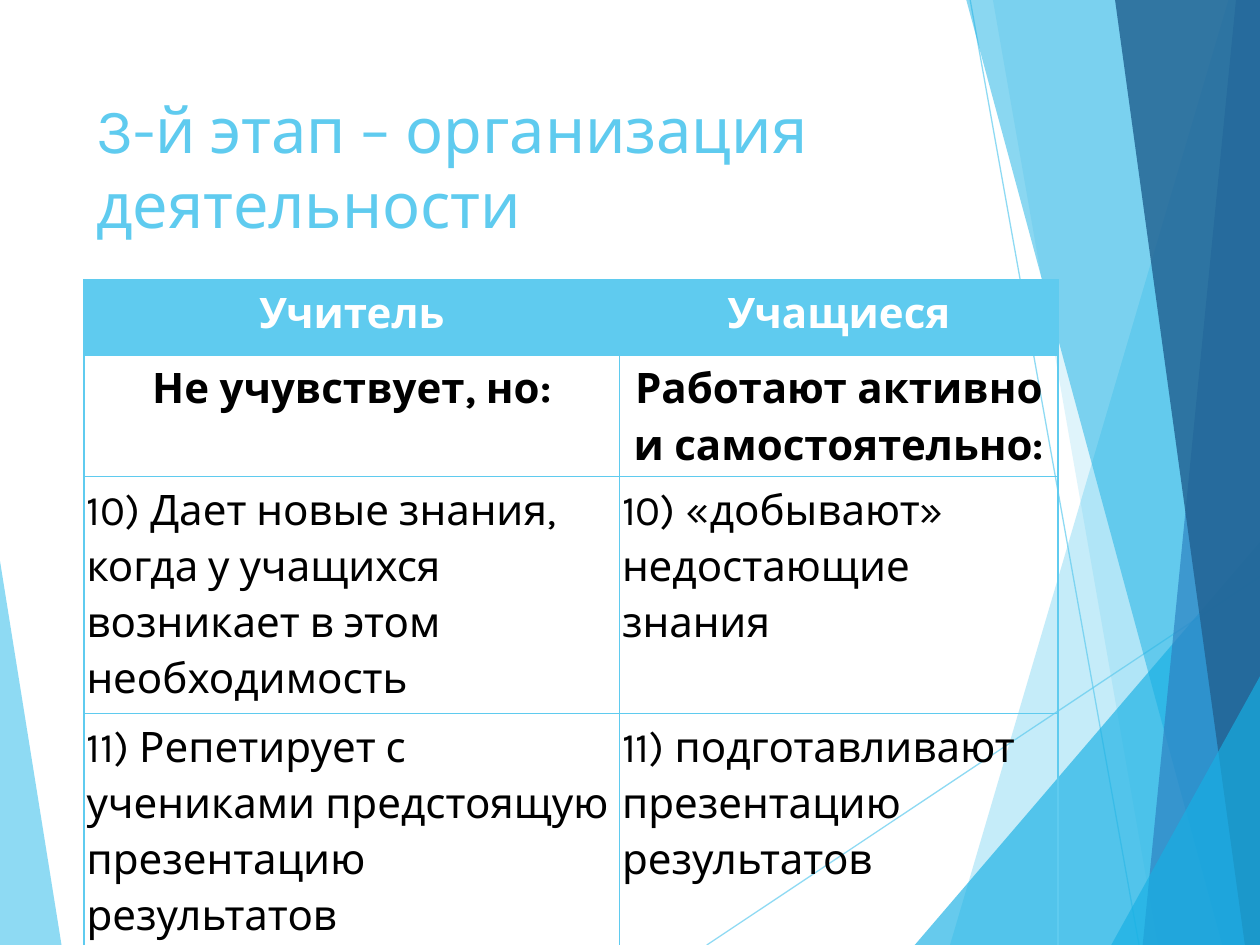
import pptx
import pptx.dml.color
import pptx.enum.shapes
import pptx.enum.text
import pptx.oxml
import pptx.oxml.ns
import pptx.util

Pt = pptx.util.Pt
RGBColor = pptx.dml.color.RGBColor
ALIGN = pptx.enum.text.PP_ALIGN
SKY = RGBColor(0x5F, 0xCB, 0xEF)
CYAN = RGBColor(0x17, 0xB0, 0xE4)
BLUE = RGBColor(0x2E, 0x83, 0xC3)
NAVY = RGBColor(0x22, 0x62, 0x92)
BLACK = RGBColor(0, 0, 0)
WHITE = RGBColor(255, 255, 255)
FONT = "Karla"
LEFT_EDGE, RIGHT, BOTTOM = -0.7, 720.7, 540

LEFT_FACET = ([(LEFT_EDGE, 316), (35.3, 540.7), (LEFT_EDGE, BOTTOM)], SKY, 70)
RIGHT_FACETS = [
    ([(702, 0), (542.9, BOTTOM), (RIGHT, BOTTOM), (RIGHT, 0)], SKY, 36),
    ([(567.4, 0), (661.7, BOTTOM), (RIGHT, BOTTOM), (RIGHT, 0)], SKY, 20),
    ([(522.7, BOTTOM), (RIGHT, 308.9), (RIGHT, BOTTOM)], CYAN, 66),
    ([(552.2, 0), (698.4, BOTTOM), (RIGHT, BOTTOM), (RIGHT, 0)], CYAN, 50),
    ([(706.3, 0), (653, BOTTOM), (RIGHT, BOTTOM), (RIGHT, 0)], BLUE, 70),
    ([(637.2, 0), (711.4, BOTTOM), (RIGHT, BOTTOM), (RIGHT, 0)], NAVY, 82),
    ([(635, BOTTOM), (RIGHT, 385.2), (RIGHT, BOTTOM)], CYAN, 66),
]
RAYS = [(403.9, 540, 720.7, 329), (554.4, 0, 650.9, 540)]

COLUMN_WIDTHS = [306, 250.7]
ROW_HEIGHTS = [43.2, 34.6, 103.7, 103.7]
ROWS = [
    ("Учитель", "Учащиеся"),
    ("Не учувствует, но:", "Работают активно и самостоятельно:"),
    ("10) Дает новые знания, когда у учащихся возникает в этом необходимость",
     "10) «добывают» недостающие знания"),
    ("11) Репетирует с учениками предстоящую презентацию результатов",
     "11) подготавливают презентацию результатов"),
]


def set_opacity(element, percent):
    color = element.find(".//" + pptx.oxml.ns.qn("a:srgbClr"))
    alpha = color.makeelement(pptx.oxml.ns.qn("a:alpha"), {"val": str(percent * 1000)})
    color.append(alpha)


def add_facet(page, points, color, opacity):
    corners = [(Pt(x), Pt(y)) for x, y in points]
    builder = page.shapes.build_freeform(*corners[0])
    builder.add_line_segments(corners[1:], close=True)
    facet = builder.convert_to_shape()
    facet.shadow.inherit = False
    facet.fill.solid()
    facet.fill.fore_color.rgb = color
    set_opacity(facet.fill._xPr, opacity)
    facet.line.fill.background()


def add_ray(page, x1, y1, x2, y2):
    ray = page.shapes.add_connector(
        pptx.enum.shapes.MSO_CONNECTOR.STRAIGHT, Pt(x1), Pt(y1), Pt(x2), Pt(y2))
    ray.line.color.rgb = SKY
    ray.line.width = Pt(0.75)
    properties = ray._element.spPr
    set_opacity(properties, 70)
    properties.append(properties.makeelement(pptx.oxml.ns.qn("a:effectLst"), {}))


def format_text(frame, size, color, bold=False):
    for para in frame.paragraphs:
        for span in para.runs:
            span.font.name = FONT
            span.font.size = Pt(size)
            span.font.bold = bold
            span.font.color.rgb = color


def add_title(page, text):
    box = page.shapes.add_textbox(Pt(48), Pt(48), Pt(500), Pt(104))
    frame = box.text_frame
    frame.word_wrap = True
    frame.vertical_anchor = pptx.enum.text.MSO_ANCHOR.TOP
    frame.text = text
    format_text(frame, 36, SKY)


def add_borders(cell):
    properties = cell._tc.get_or_add_tcPr()
    for side in "LRTB":
        properties.append(pptx.oxml.parse_xml(
            f'<a:ln{side} {pptx.oxml.ns.nsdecls("a")} w="{Pt(1)}">'
            f'<a:solidFill><a:srgbClr val="{SKY}"/></a:solidFill></a:ln{side}>'))


def fill_cell(cell, text, row):
    cell.margin_left = cell.margin_right = Pt(1.5)
    cell.margin_top = cell.margin_bottom = Pt(1.5)
    add_borders(cell)
    if row == 0:
        cell.fill.solid()
        cell.fill.fore_color.rgb = SKY
    else:
        cell.fill.background()
    cell.text_frame.text = text
    heading = row < 2
    para = cell.text_frame.paragraphs[0]
    para.alignment = ALIGN.CENTER if heading else ALIGN.LEFT
    para.line_spacing = 1.15
    format_text(cell.text_frame, 24, WHITE if row == 0 else BLACK, heading)


def add_role_table(page):
    table = page.shapes.add_table(
        len(ROWS), len(COLUMN_WIDTHS), Pt(48), Pt(160),
        Pt(sum(COLUMN_WIDTHS)), Pt(sum(ROW_HEIGHTS))).table
    table.first_row = table.horz_banding = False
    for column, width in zip(table.columns, COLUMN_WIDTHS):
        column.width = Pt(width)
    for row, height in zip(table.rows, ROW_HEIGHTS):
        row.height = Pt(height)
    for row, texts in enumerate(ROWS):
        for column, text in enumerate(texts):
            fill_cell(table.cell(row, column), text, row)


def main():
    deck = pptx.Presentation()
    deck.slide_width, deck.slide_height = Pt(720), Pt(540)
    page = deck.slides.add_slide(deck.slide_layouts[6])
    add_facet(page, *LEFT_FACET)
    for ray in RAYS:
        add_ray(page, *ray)
    for facet in RIGHT_FACETS:
        add_facet(page, *facet)
    add_title(page, "3-й этап – организация деятельности")
    add_role_table(page)
    deck.save("out.pptx")


if __name__ == "__main__":
    main()
